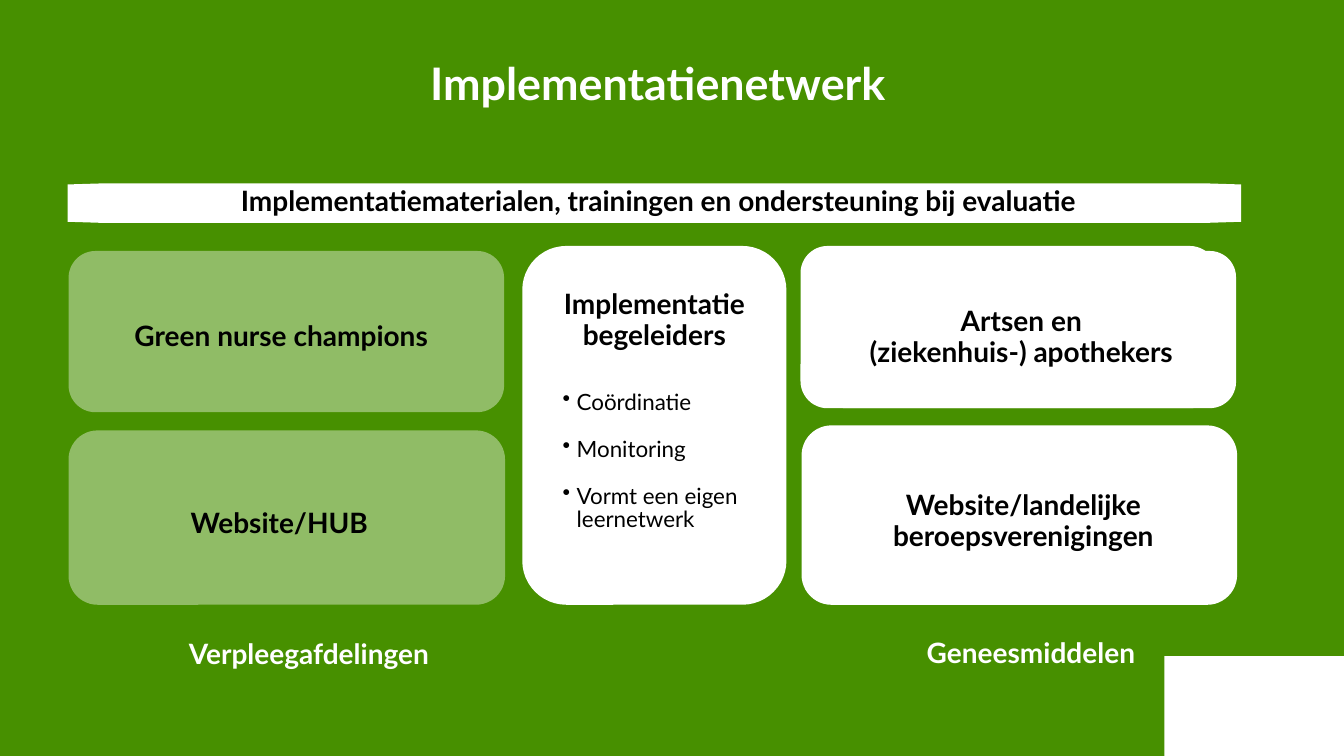
from dataclasses import dataclass

from lxml import etree
from pptx import Presentation
from pptx import util as u
from pptx.dml.color import RGBColor
from pptx.enum import shapes, text
from pptx.oxml import ns

GREEN, WHITE, BLACK = "479000", "FFFFFF", "000000"


@dataclass(frozen=True)
class Box:
    left: float
    top: float
    width: float
    height: float

    def lengths(self) -> list:
        return [u.Inches(n) for n in (self.left, self.top, self.width, self.height)]


@dataclass(frozen=True)
class Card:
    box: Box
    opacity: int = 100
    preset: shapes.MSO_SHAPE = shapes.MSO_SHAPE.ROUNDED_RECTANGLE


@dataclass(frozen=True)
class Label:
    words: str
    box: Box
    color: str = BLACK
    size: float = 20
    leading: float | None = 22.4
    middle: bool = True


CARDS = [
    Card(Box(11.55, 6.51, 1.8, 0.99), preset=shapes.MSO_SHAPE.RECTANGLE),
    Card(Box(5.18, 2.44, 2.62, 3.56)),
    Card(Box(0.68, 2.49, 4.32, 1.6), 40),
    Card(Box(7.95, 4.22, 4.32, 1.78)),
    Card(Box(0.68, 4.27, 4.33, 1.73), 40),
    Card(Box(8.13, 2.49, 4.13, 1.56)),
    Card(Box(7.94, 2.44, 4.13, 1.61)),
]

BANNER = [
    (0.99, 1.82), (11.99, 1.82), (12.31, 1.83), (12.31, 2.2),
    (11.99, 2.21), (0.99, 2.21), (0.67, 2.2), (0.67, 1.83),
]

LABELS = [
    Label("Implementatienetwerk", Box(0.68, 0.51, 11.69, 0.54), WHITE, 32, 41.6, False),
    Label("Implementatiematerialen, trainingen en ondersteuning bij evaluatie",
          Box(0.9, 1.87, 11.26, 0.29), leading=19.6),
    Label("Green nurse champions", Box(0.96, 3.18, 3.66, 0.31)),
    Label("Website/HUB", Box(1.3, 5.04, 2.94, 0.31)),
    Label("Implementatie\nbegeleiders", Box(5.25, 2.86, 2.48, 0.62), middle=False),
    Label("Artsen en\n(ziekenhuis-) apothekers", Box(8.3, 3.03, 3.66, 0.62)),
    Label("Website/landelijke beroepsverenigingen", Box(8.35, 4.86, 3.6, 0.62)),
    Label("Verpleegafdelingen", Box(0.9, 6.31, 4.33, 0.34), WHITE, leading=None, middle=False),
    Label("Geneesmiddelen", Box(8.04, 6.3, 4.37, 0.34), WHITE, leading=None, middle=False),
]

TASKS = "Coördinatie\nMonitoring\nVormt een eigen leernetwerk"


def set_fill(fill, color: str, opacity: int = 100) -> None:
    fill.solid()
    fill.fore_color.rgb = RGBColor.from_string(color)
    if opacity < 100:
        color_element = fill._xPr.find(f".//{ns.qn('a:srgbClr')}")
        etree.SubElement(color_element, ns.qn("a:alpha"), val=str(opacity * 1000))


def finish_shape(shape, opacity: int = 100) -> None:
    shape.shadow.inherit = False
    set_fill(shape.fill, WHITE, opacity)
    shape.line.fill.background()


def add_card(slide, card: Card) -> None:
    shape = slide.shapes.add_shape(card.preset, *card.box.lengths())
    finish_shape(shape, card.opacity)


def add_banner(slide) -> None:
    points = [(u.Inches(x), u.Inches(y)) for x, y in BANNER]
    builder = slide.shapes.build_freeform(*points[0])
    builder.add_line_segments(points[1:], close=True)
    finish_shape(builder.convert_to_shape())


def add_bullet(paragraph) -> None:
    paragraph.level = 1
    properties = paragraph._p.get_or_add_pPr()
    properties.set("marL", str(u.Inches(0.28)))
    properties.set("indent", str(-u.Inches(0.14)))
    bullet_color = etree.SubElement(properties, ns.qn("a:buClr"))
    etree.SubElement(bullet_color, ns.qn("a:srgbClr"), val=BLACK)
    etree.SubElement(properties, ns.qn("a:buChar"), char="•")


def add_text(slide, words: str, box: Box, *, size: float = 20, color: str = BLACK,
             bold: bool = True, leading: float | None = None, gap: float = 0,
             middle: bool = False, bullets: bool = False) -> None:
    frame = slide.shapes.add_textbox(*box.lengths()).text_frame
    frame.margin_left = frame.margin_top = frame.margin_right = frame.margin_bottom = 0
    frame.word_wrap = True
    frame.auto_size = text.MSO_AUTO_SIZE.SHAPE_TO_FIT_TEXT
    frame.vertical_anchor = text.MSO_ANCHOR.MIDDLE if middle else text.MSO_ANCHOR.TOP
    for index, line in enumerate(words.split("\n")):
        paragraph = frame.add_paragraph() if index else frame.paragraphs[0]
        if bullets:
            add_bullet(paragraph)
        paragraph.alignment = text.PP_ALIGN.LEFT if bullets else text.PP_ALIGN.CENTER
        if leading:
            paragraph.line_spacing = u.Pt(leading)
        if index and gap:
            paragraph.space_before = u.Pt(gap)
        run = paragraph.add_run()
        run.text = line
        run.font.name = "Lato"
        run.font.size = u.Pt(size)
        run.font.bold = bold
        run.font.color.rgb = RGBColor.from_string(color)


def main() -> None:
    presentation = Presentation()
    presentation.slide_width = u.Inches(13.33)
    presentation.slide_height = u.Inches(7.5)
    slide = presentation.slides.add_slide(presentation.slide_layouts[6])
    set_fill(slide.background.fill, GREEN)

    for card in CARDS:
        add_card(slide, card)
    add_banner(slide)
    for label in LABELS:
        add_text(slide, label.words, label.box, size=label.size, color=label.color,
                 leading=label.leading, middle=label.middle)
    add_text(slide, TASKS, Box(5.44, 3.88, 2.48, 1.4), size=16, bold=False,
             leading=16.8, gap=16.8, bullets=True)

    presentation.save("out.pptx")


if __name__ == "__main__":
    main()
